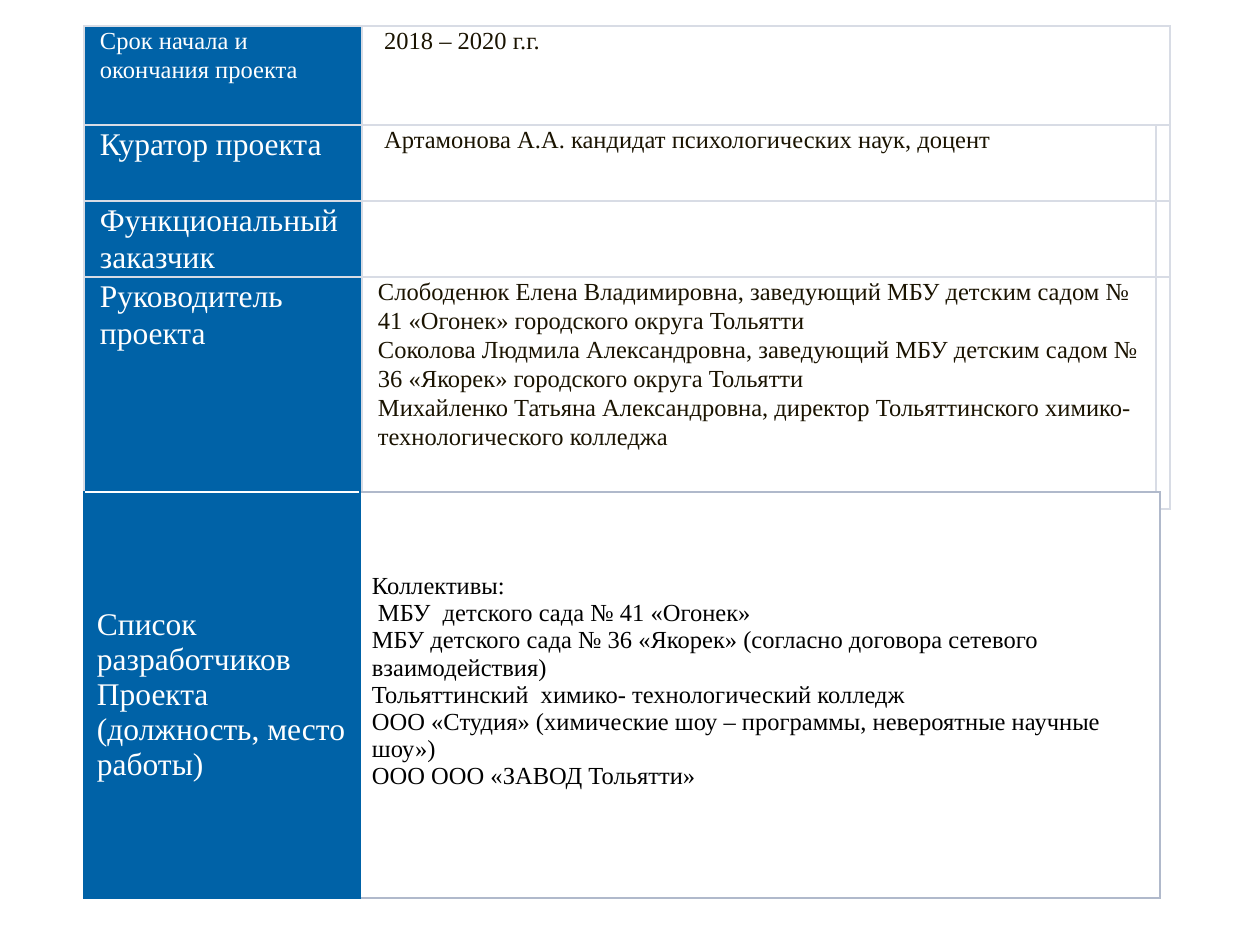
"""Builds a slide with the passport of a kindergarten project in two tables."""
import lxml.etree
import pptx
import pptx.dml.color
import pptx.enum.text
import pptx.oxml.ns
import pptx.util

BLUE, WHITE, BLACK, INK = "0062A7", "FFFFFF", "000000", "1A1300"
PALE, STEEL = "D8DCE5", "B0B9CB"
MIDDLE = pptx.enum.text.MSO_ANCHOR.MIDDLE
TOP = pptx.enum.text.MSO_ANCHOR.TOP


def px(count):
    return pptx.util.Emu(round(count * 914400 / 126))


def color(value):
    return pptx.dml.color.RGBColor.from_string(value)


class Page:
    def __init__(self, deck, font="Times New Roman"):
        self.slide = deck.slides.add_slide(deck.slide_layouts[6])
        self.font = font

    def table(self, left, top, columns, rows):
        frame = self.slide.shapes.add_table(
            len(rows), len(columns), px(left), px(top), px(sum(columns)), px(sum(rows)))
        table = frame.table
        table.first_row = table.horz_banding = False
        for column, width in zip(table.columns, columns):
            column.width = px(width)
        for row, height in zip(table.rows, rows):
            row.height = px(height)
        return table

    def cell(self, cell, fill, borders, margins):
        self.borders(cell, borders)
        cell.fill.solid()
        cell.fill.fore_color.rgb = color(fill)
        cell.margin_left, cell.margin_top, cell.margin_right, cell.margin_bottom = map(px, margins)

    def borders(self, cell, borders):
        properties = cell._tc.get_or_add_tcPr()
        for side, (shade, width) in zip("LRTB", borders):
            line = lxml.etree.SubElement(
                properties, pptx.oxml.ns.qn(f"a:ln{side}"), w=str(pptx.util.Pt(width)))
            fill = lxml.etree.SubElement(line, pptx.oxml.ns.qn("a:solidFill"))
            lxml.etree.SubElement(fill, pptx.oxml.ns.qn("a:srgbClr"), val=shade)

    def text(self, cell, lines, size, shade, spacing=1.0, anchor=TOP):
        cell.vertical_anchor = anchor
        frame = cell.text_frame
        frame.text = "\n".join(lines)
        for para in frame.paragraphs:
            para.line_spacing = spacing
            para.font.name = self.font
            para.font.size = pptx.util.Pt(size)
            para.font.color.rgb = color(shade)


PASSPORT = [
    ("Срок начала и окончания проекта", 14, [" 2018 – 2020 г.г."]),
    ("Куратор проекта", 18, [" Артамонова А.А. кандидат психологических наук, доцент"]),
    ("Функциональный заказчик", 18, []),
    ("Руководитель проекта", 18, [
        "Слободенюк Елена Владимировна, заведующий МБУ детским садом № 41 «Огонек» "
        "городского округа Тольятти",
        "Соколова Людмила Александровна, заведующий МБУ детским садом № 36 «Якорек» "
        "городского округа Тольятти",
        "Михайленко Татьяна Александровна, директор Тольяттинского химико- "
        "технологического колледжа",
    ]),
]
DEVELOPERS_LABEL = ["Список разработчиков", "Проекта (должность, место работы)"]
DEVELOPERS = [
    "Коллективы:",
    " МБУ  детского сада № 41 «Огонек»",
    "МБУ детского сада № 36 «Якорек» (согласно договора сетевого взаимодействия)",
    "Тольяттинский  химико- технологический колледж",
    "ООО «Студия» (химические шоу – программы, невероятные научные шоу»)",
    "ООО ООО «ЗАВОД Тольятти»",
]


def add_passport(page):
    table = page.table(84, 26, [278, 794, 14], [99, 76, 76, 232])
    for row, (label, size, lines) in enumerate(PASSPORT):
        for column, fill in enumerate([BLUE, WHITE, WHITE]):
            margins = (4, 0, 4, 0) if column == 2 else (16, 0, 4, 0)
            page.cell(table.cell(row, column), fill, [(PALE, 1)] * 4, margins)
        page.text(table.cell(row, 0), [label], size, WHITE, 1.07)
        page.text(table.cell(row, 1), lines, 14, INK, 1.07)
    table.cell(0, 1).merge(table.cell(0, 2))


def add_developers(page):
    table = page.table(84, 492, [276, 800], [406])
    label, names = table.cell(0, 0), table.cell(0, 1)
    page.cell(label, BLUE, [(BLUE, 1.5), (BLUE, 1), (WHITE, 1.5), (BLUE, 1.5)], (13, 6, 13, 6))
    page.text(label, DEVELOPERS_LABEL, 18, WHITE, anchor=MIDDLE)
    page.cell(names, WHITE, [(BLUE, 1)] + [(STEEL, 1)] * 3, (12, 81, 12, 6))
    page.text(names, DEVELOPERS, 14, BLACK)


def main():
    deck = pptx.Presentation()
    deck.slide_width, deck.slide_height = px(1260), px(945)
    page = Page(deck)
    add_passport(page)
    add_developers(page)
    deck.save("out.pptx")


if __name__ == "__main__":
    main()
